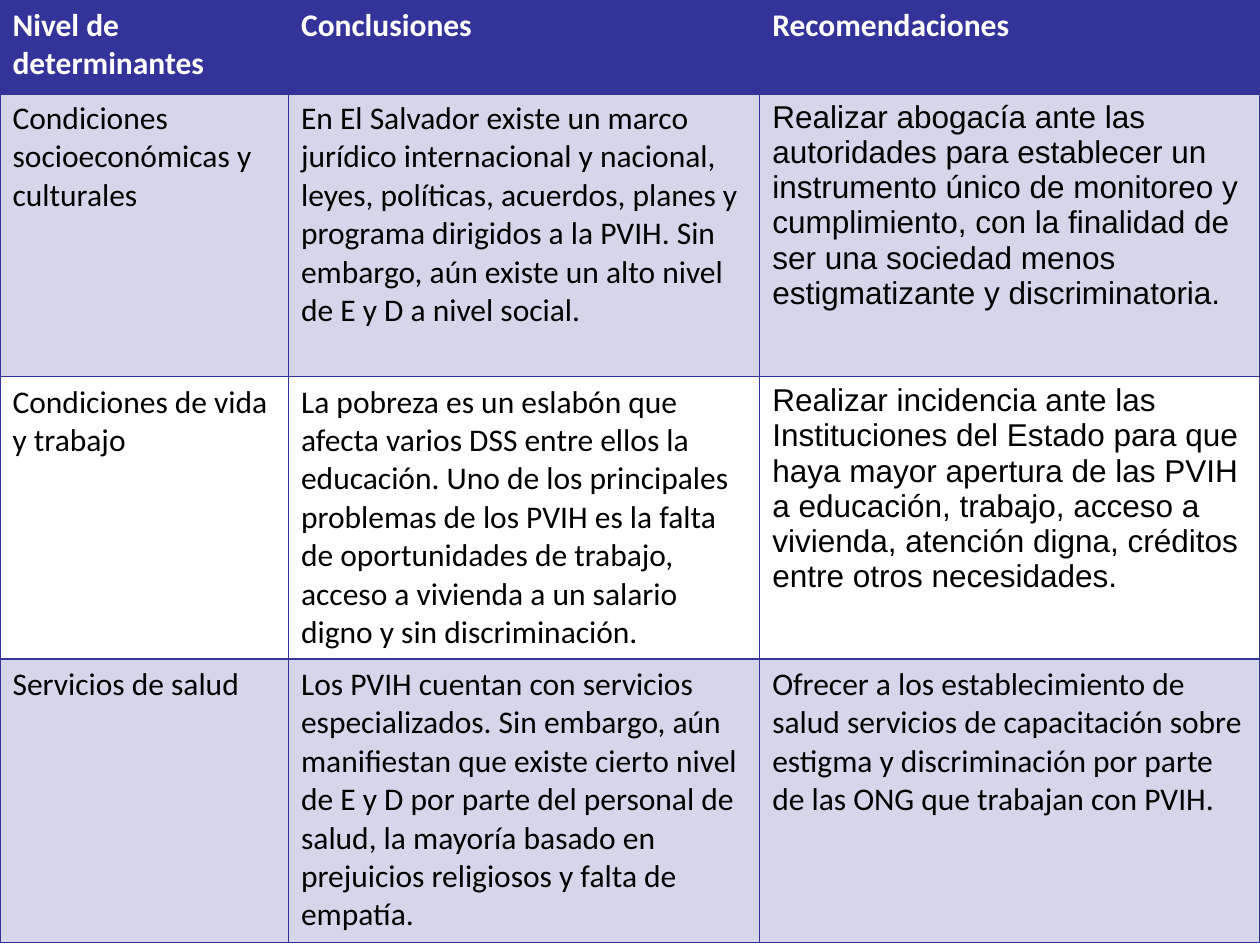
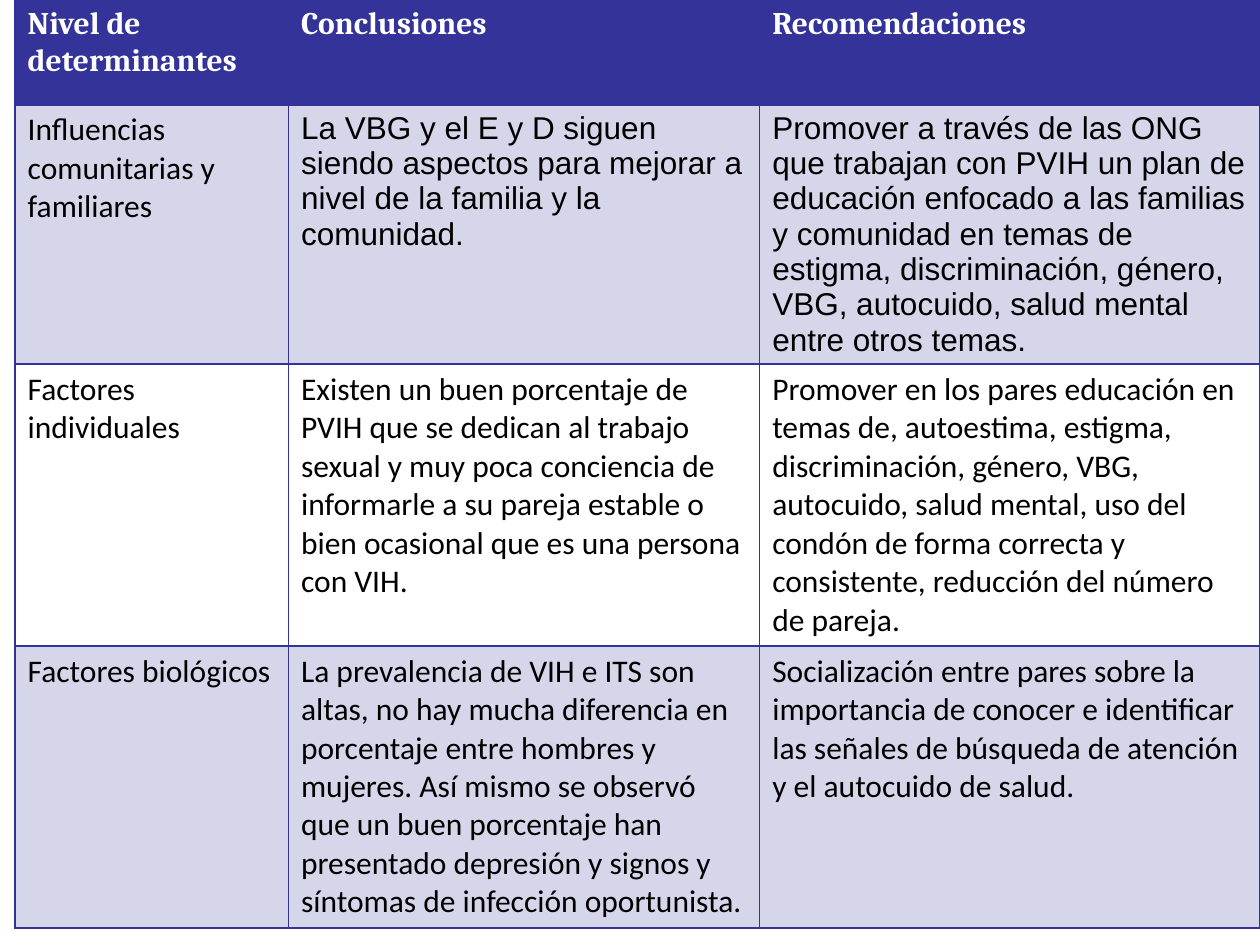
from lxml import etree
from pptx import Presentation
from pptx.dml.color import RGBColor
from pptx.oxml.ns import qn
from pptx.util import Inches, Pt

INDIGO = RGBColor(0x33, 0x33, 0x99)
WHITE = RGBColor(0xFF, 0xFF, 0xFF)
BLACK = RGBColor(0x00, 0x00, 0x00)
BODY_FONT = "Calibri"
ALT_FONT = "Arial"
TEXT_SIZE = Pt(18)
TINT_ALPHA = 20
BLANK_LAYOUT = 6

HEADINGS = ["Nivel de determinantes", "Conclusiones", "Recomendaciones"]

# Each slide: table box, column widths, row heights, heading font, body rows,
# and the (row, column) cells that are set in the alternative font
SLIDES = [
    {
        "left": 0,
        "widths": [2.29, 3.74, 3.97],
        "heights": [0.74, 2.25, 2.24, 2.25],
        "heading_font": "Calibri",
        "alt_cells": {(1, 2), (2, 2)},
        "rows": [
            ["Condiciones socioeconómicas y culturales",
             "En El Salvador existe un marco jurídico internacional y nacional, "
             "leyes, políticas, acuerdos, planes y programa dirigidos a la PVIH. "
             "Sin embargo, aún existe un alto nivel de E y D a nivel social.",
             "Realizar abogacía ante las autoridades para establecer un "
             "instrumento único de monitoreo y cumplimiento, con la finalidad de "
             "ser una sociedad menos estigmatizante y discriminatoria."],
            ["Condiciones de vida y trabajo",
             "La pobreza es un eslabón que afecta varios DSS entre ellos la "
             "educación. Uno de los principales problemas de los PVIH es la falta "
             "de oportunidades de trabajo, acceso a vivienda a un salario digno y "
             "sin discriminación.",
             "Realizar incidencia ante las Instituciones del Estado para que haya "
             "mayor apertura de las PVIH a educación, trabajo, acceso a vivienda, "
             "atención digna, créditos entre otros necesidades."],
            ["Servicios de salud",
             "Los PVIH cuentan con servicios especializados. Sin embargo, aún "
             "manifiestan que existe cierto nivel de E y D por parte del personal "
             "de salud, la mayoría basado en prejuicios religiosos y falta de "
             "empatía.",
             "Ofrecer a los establecimiento de salud servicios de capacitación "
             "sobre estigma y discriminación por parte de las ONG que trabajan "
             "con PVIH."],
        ],
    },
    {
        "left": 0.12,
        "widths": [2.17, 3.74, 3.97],
        "heights": [0.83, 2.06, 2.23, 2.24],
        "heading_font": "Cambria",
        "alt_cells": {(1, 1), (1, 2)},
        "rows": [
            ["Influencias comunitarias y familiares",
             "La VBG y el E y D siguen siendo aspectos para mejorar a nivel de la "
             "familia y la comunidad.",
             "Promover a través de las ONG que trabajan con PVIH un plan de "
             "educación enfocado a las familias y comunidad en temas de estigma, "
             "discriminación, género, VBG, autocuido, salud mental entre otros "
             "temas."],
            ["Factores individuales",
             "Existen un buen porcentaje de PVIH que se dedican al trabajo sexual "
             "y muy poca conciencia de informarle a su pareja estable o bien "
             "ocasional que es una persona con VIH.",
             "Promover en los pares educación en temas de, autoestima, estigma, "
             "discriminación, género, VBG, autocuido, salud mental, uso del "
             "condón de forma correcta y consistente, reducción del número de "
             "pareja."],
            ["Factores biológicos",
             "La prevalencia de VIH e ITS son altas, no hay mucha diferencia en "
             "porcentaje entre hombres y mujeres. Así mismo se observó que un "
             "buen porcentaje han presentado depresión y signos y síntomas de "
             "infección oportunista.",
             "Socialización entre pares sobre la importancia de conocer e "
             "identificar las señales de búsqueda de atención y el autocuido de "
             "salud."],
        ],
    },
]


def fill_cell(cell, color, alpha=100):
    cell.fill.solid()
    cell.fill.fore_color.rgb = color
    if alpha < 100:
        color_node = cell._tc.tcPr.find(".//" + qn("a:srgbClr"))
        etree.SubElement(color_node, qn("a:alpha"), val=str(alpha * 1000))


def border_cell(cell, bottom_width):
    """Draw the four sides; borders come before the fill in the cell properties."""
    widths = {"a:lnL": 1, "a:lnR": 1, "a:lnT": 1, "a:lnB": bottom_width}
    for position, (side, width) in enumerate(widths.items()):
        line = etree.Element(qn(side), w=str(Pt(width)))
        solid = etree.SubElement(line, qn("a:solidFill"))
        etree.SubElement(solid, qn("a:srgbClr"), val=str(INDIGO))
        cell._tc.tcPr.insert(position, line)


def write_cell(cell, text, font_name, color, bold):
    cell.text = text
    cell.margin_left = cell.margin_right = Inches(0.1)
    cell.margin_top = cell.margin_bottom = Inches(0.05)
    font = cell.text_frame.paragraphs[0].font
    font.name, font.size, font.bold = font_name, TEXT_SIZE, bold
    font.color.rgb = color


def add_findings_table(page, content):
    widths, heights = content["widths"], content["heights"]
    rows = [HEADINGS] + content["rows"]
    frame = page.shapes.add_table(
        len(rows), len(HEADINGS), Inches(content["left"]), Inches(0),
        Inches(sum(widths)), Inches(sum(heights)))
    table = frame.table
    table.horz_banding = False
    for column, width in zip(table.columns, widths):
        column.width = Inches(width)
    for row, height in zip(table.rows, heights):
        row.height = Inches(height)

    for row_index, texts in enumerate(rows):
        for column_index, text in enumerate(texts):
            cell = table.cell(row_index, column_index)
            if row_index == 0:
                write_cell(cell, text, content["heading_font"], WHITE, True)
                fill_cell(cell, INDIGO)
            else:
                is_alt = (row_index, column_index) in content["alt_cells"]
                write_cell(cell, text, ALT_FONT if is_alt else BODY_FONT, BLACK, False)
                # Odd body rows are tinted, even ones stay white
                if row_index % 2:
                    fill_cell(cell, INDIGO, TINT_ALPHA)
                else:
                    fill_cell(cell, WHITE)
            border_cell(cell, bottom_width=2 if row_index == 0 else 1)


def main():
    deck = Presentation()
    deck.slide_width, deck.slide_height = Inches(10), Inches(7.5)
    for content in SLIDES:
        page = deck.slides.add_slide(deck.slide_layouts[BLANK_LAYOUT])
        add_findings_table(page, content)
    deck.save("out.pptx")


if __name__ == "__main__":
    main()
